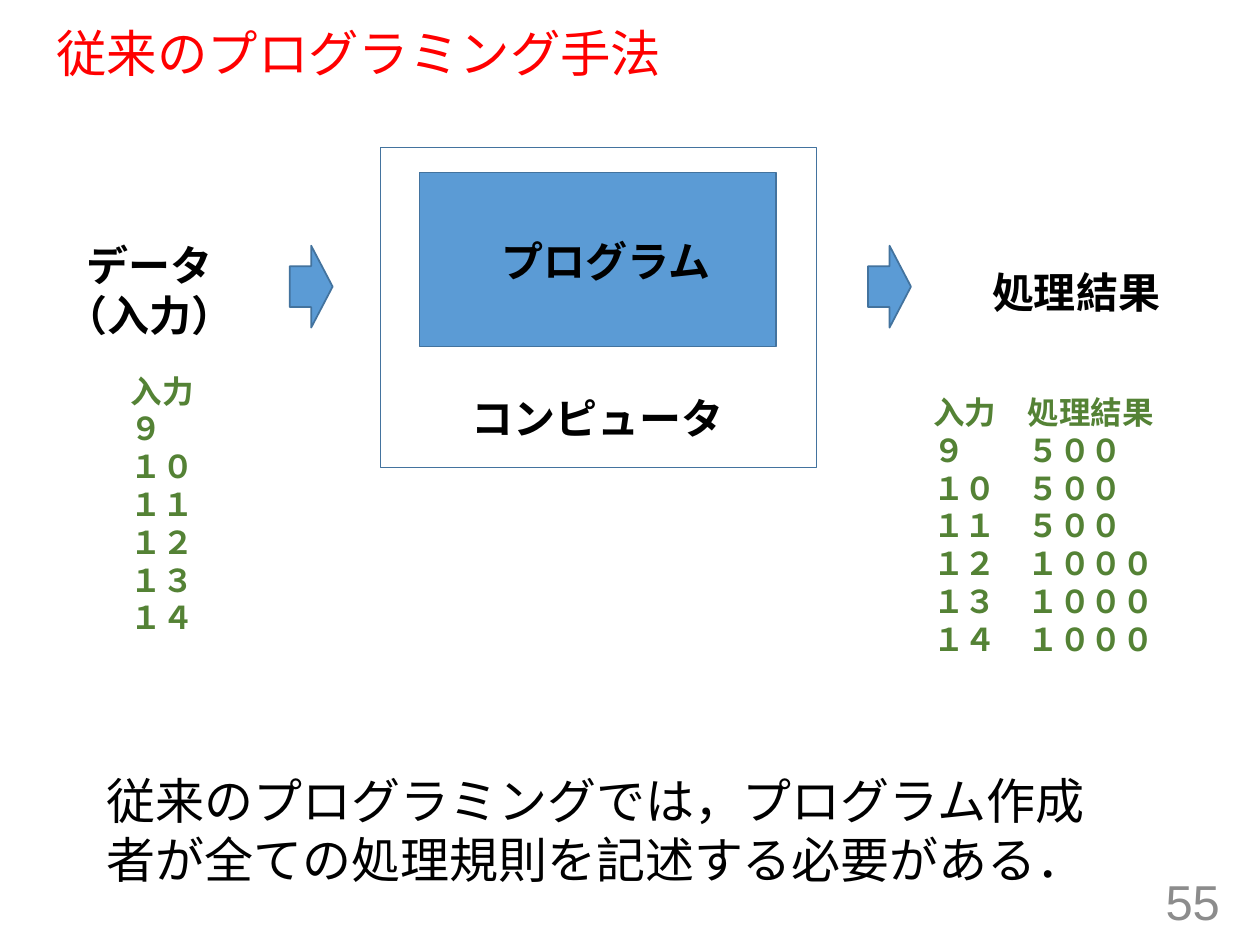
from dataclasses import dataclass

from lxml.etree import SubElement
from pptx import Presentation
from pptx.dml.color import RGBColor
from pptx.enum.shapes import MSO_SHAPE
from pptx.enum.text import MSO_ANCHOR, PP_ALIGN
from pptx.oxml.ns import qn
from pptx.util import Inches, Pt


@dataclass(frozen=True)
class Theme:
    red: str = "FF0000"
    black: str = "000000"
    green: str = "548235"
    gray: str = "8C8C8C"
    blue: str = "5B9BD5"
    edge: str = "43739E"
    head: float = 28.8
    body: float = 28
    label: float = 24
    data: float = 18
    sans: str = "Arial"
    latin: str = "Calibri"
    kanji: str = "Noto Sans CJK JP"


THEME = Theme()
WIDE, HIGH = Inches(10), Inches(7.5)
COLS, ROWS = 100, 75
FEES = {"９": "５００", "１０": "５００", "１１": "５００",
        "１２": "１０００", "１３": "１０００", "１４": "１０００"}


def place(col, row, cols, rows):
    """Turn grid columns and rows into slide lengths."""
    return (int(WIDE * col / COLS), int(HIGH * row / ROWS),
            int(WIDE * cols / COLS), int(HIGH * rows / ROWS))


def add_text(slide, cell, lines, size, font, color=THEME.black, bold=False,
             align=PP_ALIGN.LEFT, anchor=MSO_ANCHOR.TOP, space=None):
    box = slide.shapes.add_textbox(*place(*cell))
    frame = box.text_frame
    frame.word_wrap = True
    frame.vertical_anchor = anchor
    frame.text = "\n".join(lines)
    for para in frame.paragraphs:
        para.alignment = align
        para.line_spacing = space
        for run in para.runs:
            run.font.size = Pt(size)
            run.font.name = font
            run.font.bold = bold
            run.font.color.rgb = RGBColor.from_string(color)
            east = SubElement(run.font._element, qn("a:ea"))
            east.set("typeface", THEME.kanji)
    return box


def add_label(slide, cell, *lines, align=PP_ALIGN.CENTER):
    add_text(slide, cell, lines, THEME.label, THEME.kanji, bold=True, align=align)


def add_data(slide, cell, lines, stop=None):
    """Add a green list, with a tab stop (inches) for its second column."""
    box = add_text(slide, cell, lines, THEME.data, THEME.latin,
                   THEME.green, bold=True)
    if stop:
        for para in box.text_frame.paragraphs:
            tabs = SubElement(para._p.get_or_add_pPr(), qn("a:tabLst"))
            SubElement(tabs, qn("a:tab"), pos=str(Inches(stop)), algn="l")


def add_block(slide, kind, cell, fill=None):
    shape = slide.shapes.add_shape(kind, *place(*cell))
    shape.shadow.inherit = False
    if fill:
        shape.fill.solid()
        shape.fill.fore_color.rgb = RGBColor.from_string(fill)
    else:
        shape.fill.background()
    shape.line.color.rgb = RGBColor.from_string(THEME.edge)
    shape.line.width = Pt(1)


def draw_flow(slide):
    add_block(slide, MSO_SHAPE.RECTANGLE, (30.2, 11.7, 34.6, 25.4))
    add_label(slide, (36.4, 30.7, 22.2, 5), "コンピュータ", align=PP_ALIGN.LEFT)
    add_block(slide, MSO_SHAPE.RECTANGLE, (33.3, 13.7, 28.3, 13.8), THEME.blue)
    add_label(slide, (38.8, 18.2, 18.8, 5), "プログラム", align=PP_ALIGN.LEFT)
    for col in (23, 68.9):
        add_block(slide, MSO_SHAPE.RIGHT_ARROW, (col, 19.5, 3.4, 6.5), THEME.blue)
    add_label(slide, (0.8, 18.5, 22.2, 9.1), "データ", "（入力）")
    add_label(slide, (74.3, 20.7, 22.2, 5), "処理結果")


def main():
    deck = Presentation()
    deck.slide_width, deck.slide_height = WIDE, HIGH
    slide = deck.slides.add_slide(deck.slide_layouts[6])

    add_text(slide, (3.5, 1.9, 92.5, 5.1), ["従来のプログラミング手法"],
             THEME.head, THEME.sans, THEME.red,
             anchor=MSO_ANCHOR.MIDDLE, space=0.9)
    add_text(slide, (75.3, 69.5, 22.5, 4), ["55"], THEME.body, THEME.sans,
             THEME.gray, align=PP_ALIGN.RIGHT, anchor=MSO_ANCHOR.MIDDLE)
    draw_flow(slide)
    add_text(slide, (7.5, 60.7, 81.5, 10.4),
             ["従来のプログラミングでは，プログラム作成者が全ての処理規則を記述する必要がある．"],
             THEME.body, THEME.latin)
    pairs = [("入力", "処理結果"), *FEES.items()]
    add_data(slide, (73.1, 30.7, 19.7, 22.2),
             ["\t".join(pair) for pair in pairs], stop=0.75)
    add_data(slide, (9.4, 29, 9.6, 22.2), [pair[0] for pair in pairs])

    deck.save("out.pptx")


if __name__ == "__main__":
    main()
